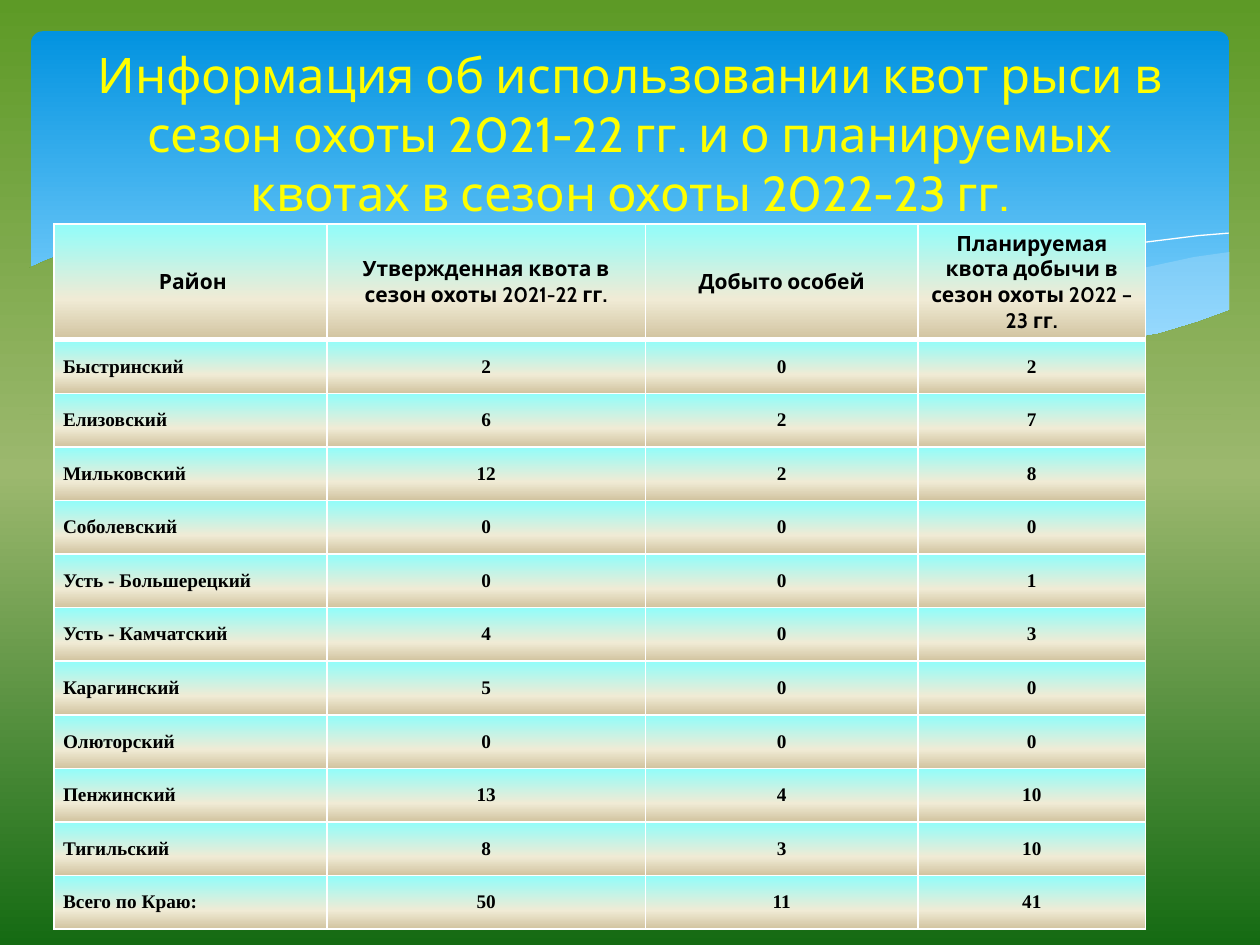
import copy

import lxml.etree
import pptx
import pptx.dml.color
import pptx.enum.shapes
import pptx.enum.text
import pptx.oxml
import pptx.oxml.ns
import pptx.util

Cm, Pt = pptx.util.Cm, pptx.util.Pt
qn = pptx.oxml.ns.qn

COLOURS = {
    "meadow": "5D9A26", "field": "9CB86E", "forest": "156B13",
    "sky": "0293E0", "haze": "83D3FE", "swell": "C6E7FC",
    "aqua": "91FDFA", "cream": "F0EBD5", "sand": "D1C39F",
    "white": "FFFFFF", "black": "000000", "title": "FFFF00",
}
MEADOW_STOPS = [(0, "meadow"), (0.5, "field"), (1, "forest")]
SKY_STOPS = [(0, "sky"), (0.9, "haze")]
CELL_STOPS = [(0, "aqua"), (0.65, "cream"), (1, "sand")]

# Wave outlines, in hundredths of a centimetre
RIGHT_SWELL = [
    (2479, 508), (2408, 518), (2301, 541), (2187, 566), (2045, 602), (1913, 630),
    (1793, 653), (1679, 673), (1791, 688), (1892, 699), (1984, 704), (2068, 706),
    (2169, 701), (2258, 691), (2339, 673), (2410, 653), (2479, 627),
]
LONG_SWELL = [
    (2268, 693), (2200, 683), (2050, 660), (1882, 627), (1697, 587), (1598, 564),
    (1483, 536), (1374, 516), (1275, 498), (1181, 485), (1067, 475), (965, 470),
    (874, 472), (795, 478), (726, 485), (820, 498), (919, 516), (1026, 536),
    (1140, 564), (1346, 610), (1527, 648), (1651, 671), (1765, 686), (1869, 699),
    (1963, 704), (2078, 706), (2177, 704),
]
FALLING_CREST = [
    (785, 495), (833, 488), (897, 480), (983, 475), (1100, 475), (1242, 483),
    (1354, 493), (1478, 508), (1615, 528), (1765, 556), (1930, 592), (2111, 638),
    (2304, 691),
]
RISING_CREST = [
    (1557, 653), (1659, 625), (1765, 597), (1900, 566), (2047, 533), (2200, 505),
    (2311, 488), (2416, 475), (2477, 470),
]
GROUND = [
    (2482, 625), (2413, 650), (2337, 673), (2253, 688), (2159, 699), (2055, 704),
    (1933, 699), (1798, 686), (1646, 665), (1471, 635), (1278, 592), (1135, 559),
    (993, 526), (864, 500), (742, 483), (635, 472), (536, 467), (450, 467),
    (371, 470), (302, 475), (241, 485), (193, 495), (150, 505), (117, 516),
    (91, 526), (58, 541), (58, 836), (2482, 836),
]

TITLE = ("Информация об использовании квот рыси в сезон охоты 2021-22 гг. "
         "и о планируемых квотах в сезон охоты 2022-23 гг.")
QUOTAS = [
    (" Район", "Утвержденная квота в сезон охоты 2021-22 гг.", "Добыто особей",
     "Планируемая квота добычи в сезон охоты 2022 – 23 гг."),
    ("Быстринский", 2, 0, 2),
    ("Елизовский", 6, 2, 7),
    ("Мильковский", 12, 2, 8),
    ("Соболевский", 0, 0, 0),
    ("Усть - Большерецкий", 0, 0, 1),
    ("Усть - Камчатский", 4, 0, 3),
    ("Карагинский", 5, 0, 0),
    ("Олюторский", 0, 0, 0),
    ("Пенжинский", 13, 4, 10),
    ("Тигильский", 8, 3, 10),
    ("Всего по Краю:", 50, 11, 41),
]
COLUMN_WIDTHS = [5.5, 6.42, 5.5, 4.58]
HEADER_HEIGHT, ROW_HEIGHT = 1.88, 1.08


def rgb(name):
    return pptx.dml.color.RGBColor.from_string(COLOURS[name])


def fill_gradient(fill, holder, stops):
    """Fill from top to bottom; holder is the element that contains the fill."""
    fill.gradient()
    fill.gradient_angle = 270
    stop_list = holder.find(".//" + qn("a:gsLst"))
    while len(stop_list) < len(stops):
        stop_list.append(copy.deepcopy(stop_list[0]))
    for stop, (position, colour) in zip(fill.gradient_stops, stops):
        stop.position = position
        stop.color.rgb = rgb(colour)


def add_outline(slide, points, close=True):
    builder = slide.shapes.build_freeform(*points[0], scale=Cm(0.01))
    builder.add_line_segments(points[1:], close=close)
    outline = builder.convert_to_shape()
    outline.shadow.inherit = False
    outline.line.fill.background()
    return outline


def add_swell(slide, points, opacity):
    swell = add_outline(slide, points)
    swell.fill.solid()
    swell.fill.fore_color.rgb = rgb("swell")
    colour = swell.element.spPr.find(".//" + qn("a:srgbClr"))
    lxml.etree.SubElement(colour, qn("a:alpha"), val=str(opacity * 1000))


def add_crest(slide, points):
    crest = add_outline(slide, points, close=False)
    crest.fill.background()
    crest.line.color.rgb = rgb("white")
    crest.line.width = Pt(0)


def add_ground(slide):
    """The lower edge of the sky shows the slide background through it."""
    add_outline(slide, GROUND).element.set("useBgFill", "1")


def add_sky(slide):
    sky = slide.shapes.add_shape(pptx.enum.shapes.MSO_SHAPE.ROUNDED_RECTANGLE,
                                 Cm(0.63), Cm(0.63), Cm(24.15), Cm(6.86))
    sky.adjustments[0] = 0.034
    sky.shadow.inherit = False
    sky.line.fill.background()
    fill_gradient(sky.fill, sky.element, SKY_STOPS)


def format_text(paragraph, size, font, colour, bold=False, centred=True):
    align = pptx.enum.text.PP_ALIGN
    paragraph.alignment = align.CENTER if centred else align.LEFT
    for run in paragraph.runs:
        run.font.size, run.font.name, run.font.bold = Pt(size), font, bold
        run.font.color.rgb = rgb(colour)


def add_title(slide):
    frame = slide.shapes.add_textbox(Cm(1.27), Cm(0.94), Cm(22.86), Cm(3.48)).text_frame
    frame.word_wrap = True
    frame.vertical_anchor = pptx.enum.text.MSO_ANCHOR.MIDDLE
    frame.text = TITLE
    format_text(frame.paragraphs[0], 28, "Cabin", "title")


def set_borders(cell_element, widths):
    properties = cell_element.get_or_add_tcPr()
    for side, width in widths.items():
        properties.append(pptx.oxml.parse_xml(
            f'<a:ln{side} {pptx.oxml.ns.nsdecls("a")} w="{Pt(width)}"><a:solidFill>'
            f'<a:srgbClr val="{COLOURS["white"]}"/></a:solidFill></a:ln{side}>'))


def add_quota_table(slide):
    height = HEADER_HEIGHT + ROW_HEIGHT * (len(QUOTAS) - 1)
    frame = slide.shapes.add_table(len(QUOTAS), len(COLUMN_WIDTHS), Cm(1.09), Cm(4.52),
                                   Cm(sum(COLUMN_WIDTHS)), Cm(height))
    table = frame.table
    table.horz_banding = False
    for column, width in zip(table.columns, COLUMN_WIDTHS):
        column.width = Cm(width)
    for index, row in enumerate(table.rows):
        row.height = Cm(ROW_HEIGHT if index else HEADER_HEIGHT)

    cell_elements = frame.element.iter(qn("a:tc"))
    for index, (cell, element) in enumerate(zip(table.iter_cells(), cell_elements)):
        row, column = divmod(index, len(COLUMN_WIDTHS))
        header = row == 0
        cell.text = str(QUOTAS[row][column])
        cell.vertical_anchor = pptx.enum.text.MSO_ANCHOR.MIDDLE
        cell.margin_left = cell.margin_right = Cm(0.1 if header else 0.18)
        cell.margin_top = cell.margin_bottom = Cm(0.13 if header else 0)
        set_borders(element, {"L": 1, "R": 1, "T": 3 if row == 1 else 1,
                              "B": 3 if header else 1})
        fill_gradient(cell.fill, element, CELL_STOPS)
        format_text(cell.text_frame.paragraphs[0], 12 if header else 11,
                    "Cabin" if header else "Times New Roman", "black",
                    bold=True, centred=header or column > 0)


def main():
    deck = pptx.Presentation()
    deck.slide_width, deck.slide_height = Cm(25.4), Cm(19.05)
    slide = deck.slides.add_slide(deck.slide_layouts[6])

    # Background and waves
    fill_gradient(slide.background.fill, slide.element, MEADOW_STOPS)
    add_sky(slide)
    add_swell(slide, RIGHT_SWELL, 29)
    add_swell(slide, LONG_SWELL, 40)
    add_crest(slide, FALLING_CREST)
    add_crest(slide, RISING_CREST)
    add_ground(slide)

    # Content
    add_quota_table(slide)
    add_title(slide)
    deck.save("out.pptx")


if __name__ == "__main__":
    main()
